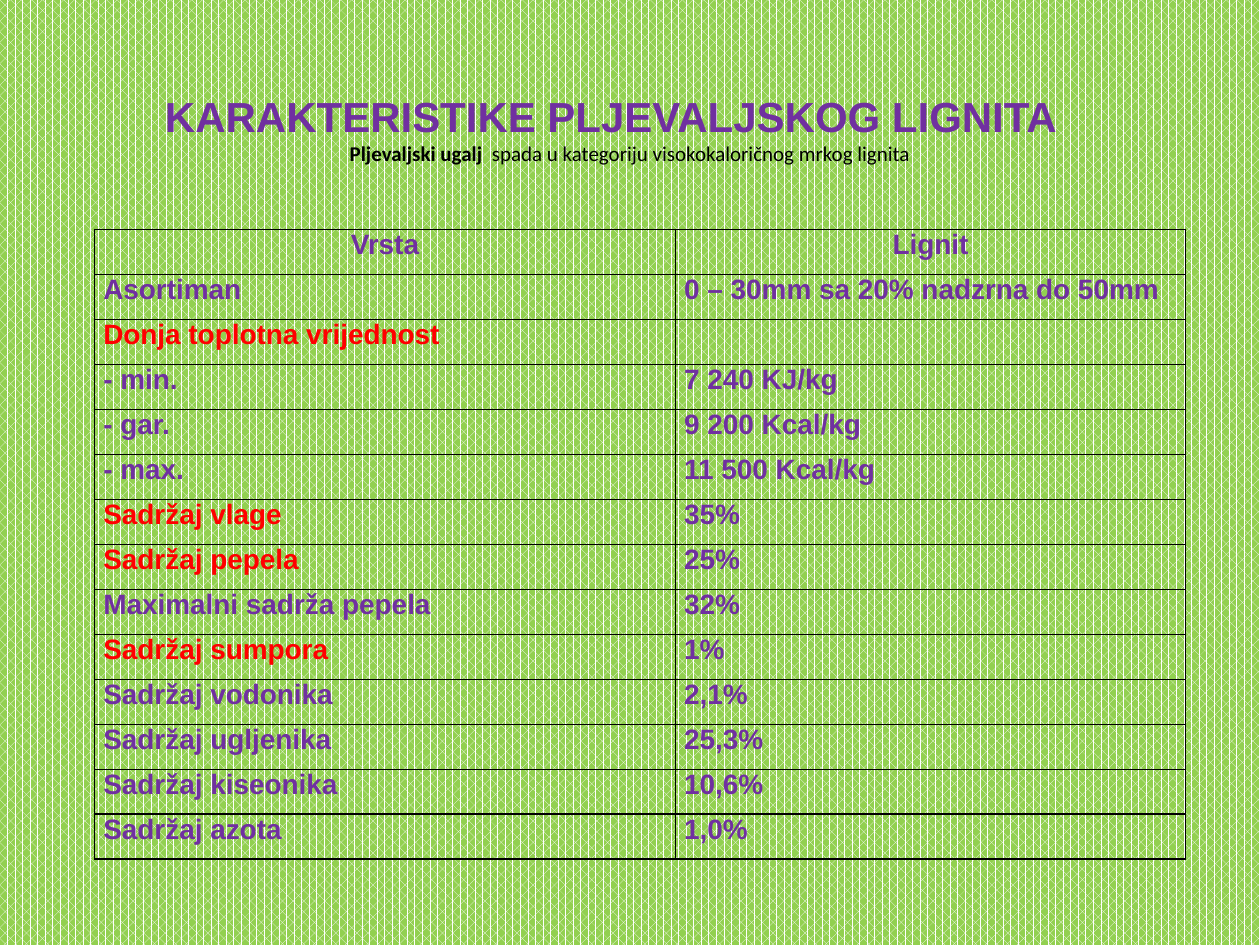
from lxml import etree
from pptx import Presentation
from pptx.dml.color import RGBColor
from pptx.enum.dml import MSO_PATTERN
from pptx.enum.text import MSO_ANCHOR, PP_ALIGN
from pptx.oxml.ns import qn
from pptx.util import Inches, Pt

MIDDLE, TOP = MSO_ANCHOR.MIDDLE, MSO_ANCHOR.TOP
CENTER, JUSTIFY = PP_ALIGN.CENTER, PP_ALIGN.JUSTIFY
DOTS = MSO_PATTERN.PERCENT_60

PURPLE, RED, BLACK = "7030A0", "FF0000", "000000"
GREEN, WHITE = "92D050", "FFFFFF"

TITLE = "KARAKTERISTIKE PLJEVALJSKOG LIGNITA"
NOTE = [("Pljevaljski ugalj  ", True),
        ("spada u kategoriju visokokaloričnog mrkog lignita", False)]
ROWS = [
    ("Vrsta", "Lignit"),
    ("Asortiman", "0 – 30mm sa 20% nadzrna do 50mm"),
    ("Donja toplotna vrijednost", ""),
    ("- min.", "7 240 KJ/kg"),
    ("- gar.", "9 200 Kcal/kg"),
    ("- max.", "11 500 Kcal/kg"),
    ("Sadržaj vlage", "35%"),
    ("Sadržaj pepela", "25%"),
    ("Maximalni sadrža pepela", "32%"),
    ("Sadržaj sumpora", "1%"),
    ("Sadržaj vodonika", "2,1%"),
    ("Sadržaj ugljenika", "25,3%"),
    ("Sadržaj kiseonika", "10,6%"),
    ("Sadržaj azota", "1,0%"),
]
KEYS = {"Donja toplotna vrijednost", "Sadržaj vlage", "Sadržaj pepela",
        "Sadržaj sumpora"}
COLS = (4.61, 4.05)
LEFT, HEAD, HIGH = 0.75, 1.82, 5


def color(code):
    return RGBColor.from_string(code)


def add_run(para, text, size, face, code, bold=True):
    run = para.add_run()
    run.text = text
    font = run.font
    font.size, font.name, font.bold = Pt(size), face, bold
    font.color.rgb = color(code)


def add_box(slide, place, anchor):
    """Add a wrapping text box and return its centred first paragraph."""
    frame = slide.shapes.add_textbox(*map(Inches, place)).text_frame
    frame.word_wrap = True
    frame.vertical_anchor = anchor
    para = frame.paragraphs[0]
    para.alignment = CENTER
    return para


def add_edges(cell):
    props = cell._tc.get_or_add_tcPr()
    for side in ("lnL", "lnR", "lnT", "lnB"):
        line = etree.SubElement(props, qn("a:" + side), w=str(Pt(1)))
        fill = etree.SubElement(line, qn("a:solidFill"))
        etree.SubElement(fill, qn("a:srgbClr"), val=BLACK)


def add_grid(slide):
    table = slide.shapes.add_table(
        len(ROWS), len(COLS), Inches(LEFT), Inches(HEAD),
        Inches(sum(COLS)), Inches(HIGH)).table
    table.first_row = table.horz_banding = False
    for col, wide in zip(table.columns, COLS):
        col.width = Inches(wide)
    for r, row in enumerate(ROWS):
        for c, text in enumerate(row):
            cell = table.cell(r, c)
            cell.margin_left = cell.margin_right = Inches(0.07)
            cell.margin_top = cell.margin_bottom = 0
            add_edges(cell)
            cell.fill.background()
            para = cell.text_frame.paragraphs[0]
            para.alignment = JUSTIFY if r else CENTER
            if text:
                add_run(para, text, 16, "Arial", RED if text in KEYS else PURPLE)


def main():
    deck = Presentation()
    deck.slide_width, deck.slide_height = Inches(10), Inches(7.5)
    slide = deck.slides.add_slide(deck.slide_layouts[6])
    fill = slide.background.fill
    fill.patterned()
    fill.pattern = DOTS
    fill.fore_color.rgb, fill.back_color.rgb = color(WHITE), color(GREEN)

    title = add_box(slide, (0.35, 0.29, 9, 1.25), MIDDLE)
    add_run(title, TITLE, 24, "Arial", PURPLE)
    add_grid(slide)
    note = add_box(slide, (0, 1.07, 10, 0.3), TOP)
    for text, bold in NOTE:
        add_run(note, text, 12, "Calibri", BLACK, bold)
    deck.save("out.pptx")


if __name__ == "__main__":
    main()
